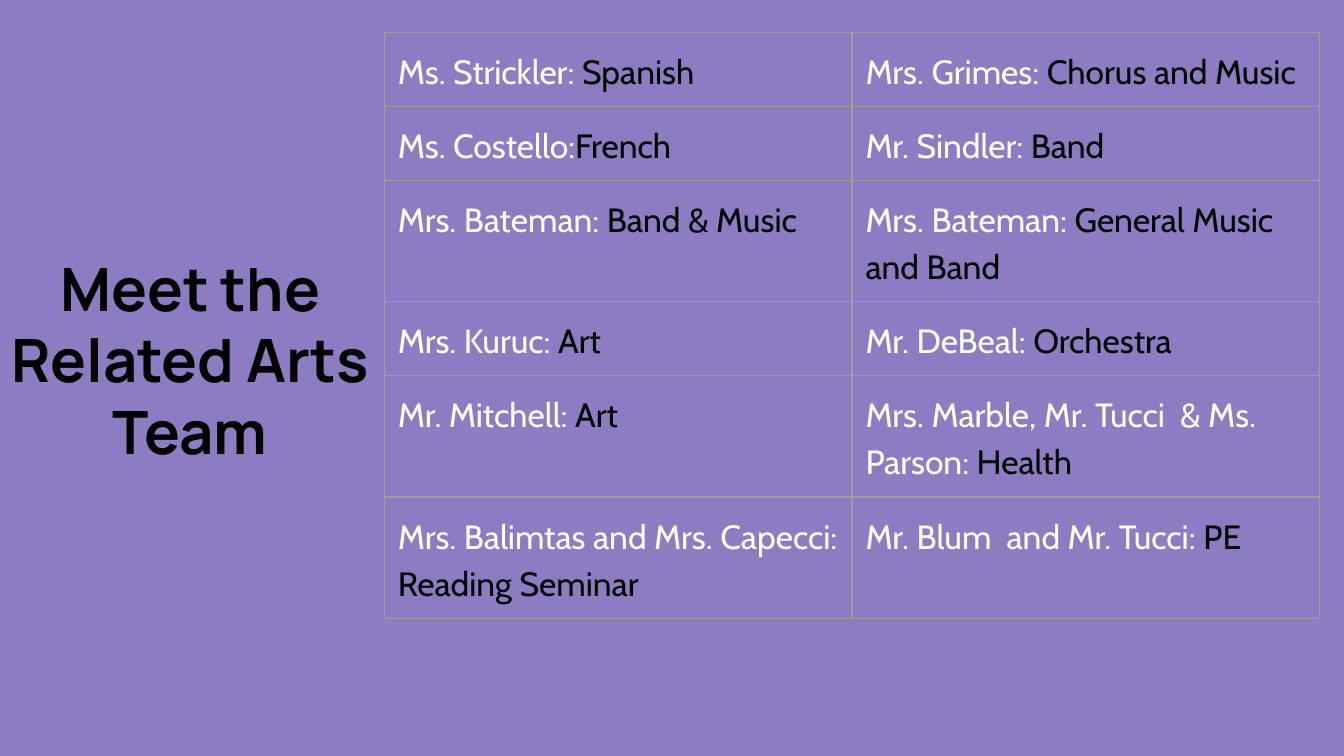
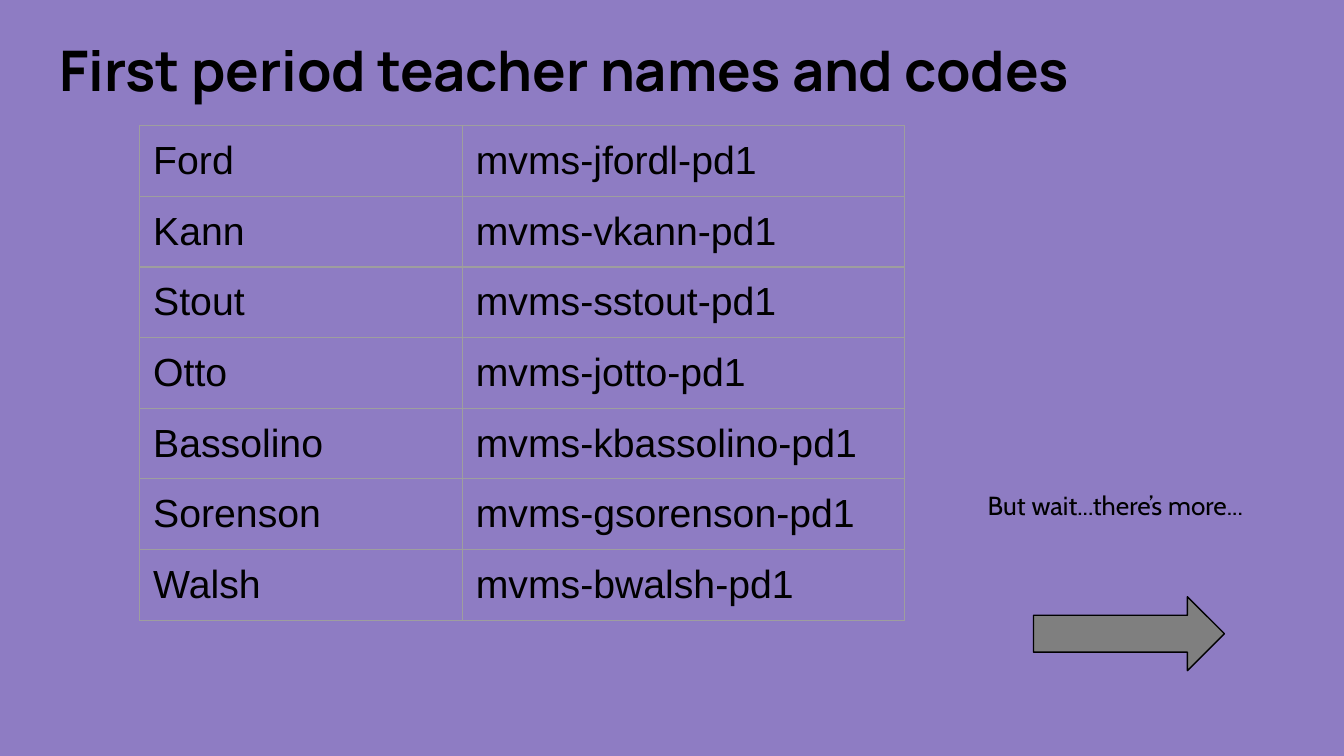
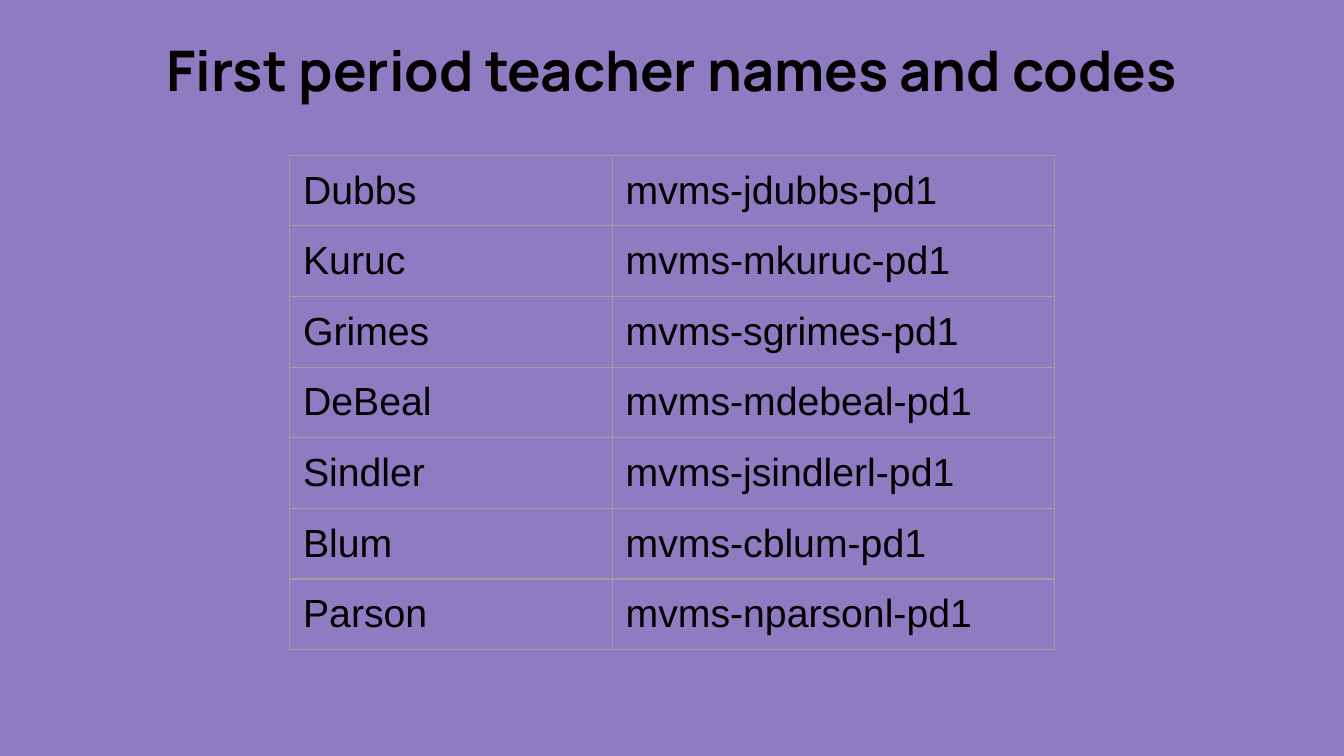
import dataclasses
import typing

import lxml.etree
import pptx
import pptx.dml.color
import pptx.enum.shapes
import pptx.enum.text
import pptx.oxml.ns
import pptx.presentation
import pptx.slide
import pptx.table
import pptx.text.text
import pptx.util

EMU_PER_PX = 4572
ALIGN = pptx.enum.text.PP_ALIGN


@dataclasses.dataclass(frozen=True)
class Theme:
    background: str = "8E7CC3"
    ink: str = "000000"
    teacher: str = "FFFFFF"
    border: str = "9E9E9E"
    arrow: str = "7F7F7F"
    title_font: str = "Manrope"
    body_font: str = "Cabin"
    code_font: str = "Arial"
    team_title_size: int = 32
    title_size: int = 30
    code_size: int = 21
    subject_size: int = 18
    note_size: int = 14
    line_width: float = 0.75
    inset: int = 20
    row_height: int = 84


THEME = Theme()


@dataclasses.dataclass(frozen=True)
class Box:
    left: int
    top: int
    width: int
    height: int

    def emu(self) -> tuple[pptx.util.Emu, ...]:
        return tuple(px(side) for side in dataclasses.astuple(self))


@dataclasses.dataclass(frozen=True)
class Title:
    text: str
    box: Box
    size: int
    align: ALIGN


class Assignment(typing.NamedTuple):
    teacher: str
    subject: str


class ClassCode(typing.NamedTuple):
    teacher: str
    code: str


@dataclasses.dataclass(frozen=True)
class CodeSlide:
    title_align: ALIGN
    table_left: int
    table_top: int
    codes: list[ClassCode]


CODE_COLUMNS = [480, 658]
TEAM_COLUMNS = [696, 696]
TEAM_ROWS = [84, 84, 180, 84, 84, 84]
TEAM_TITLE = Title(
    "Meet the Related Arts Team", Box(-72, 354, 710, 308), THEME.team_title_size, ALIGN.CENTER
)
TEAM = [
    (Assignment("Ms. Strickler:", " Spanish"), Assignment("Mrs. Grimes:", " Chorus and Music")),
    (Assignment("Ms. Costello:", "French"), Assignment("Mr. Sindler:", " Band")),
    (
        Assignment("Mrs. Bateman:", " Band & Music"),
        Assignment("Mrs. Bateman:", " General Music and Band"),
    ),
    (Assignment("Mrs. Kuruc:", " Art"), Assignment("Mr. DeBeal:", " Orchestra")),
    (
        Assignment("Mr. Mitchell:", " Art"),
        Assignment("Mrs. Marble, Mr. Tucci  & Ms. Parson:", " Health"),
    ),
    (
        Assignment("Mrs. Balimtas and Mrs. Capecci:", " Reading Seminar"),
        Assignment("Mr. Blum  and Mr. Tucci:", " PE"),
    ),
]
FIRST_CODES = CodeSlide(ALIGN.LEFT, 208, 187, [
    ClassCode("Ford", "mvms-jfordl-pd1"),
    ClassCode("Kann", "mvms-vkann-pd1"),
    ClassCode("Stout", "mvms-sstout-pd1"),
    ClassCode("Otto", "mvms-jotto-pd1"),
    ClassCode("Bassolino", "mvms-kbassolino-pd1"),
    ClassCode("Sorenson", "mvms-gsorenson-pd1"),
    ClassCode("Walsh", "mvms-bwalsh-pd1"),
])
MORE_CODES = CodeSlide(ALIGN.CENTER, 431, 231, [
    ClassCode("Dubbs", "mvms-jdubbs-pd1"),
    ClassCode("Kuruc", "mvms-mkuruc-pd1"),
    ClassCode("Grimes", "mvms-sgrimes-pd1"),
    ClassCode("DeBeal", "mvms-mdebeal-pd1"),
    ClassCode("Sindler", "mvms-jsindlerl-pd1"),
    ClassCode("Blum", "mvms-cblum-pd1"),
    ClassCode("Parson", "mvms-nparsonl-pd1"),
])


def px(length: int) -> pptx.util.Emu:
    return pptx.util.Emu(length * EMU_PER_PX)


def rgb(color: str) -> pptx.dml.color.RGBColor:
    return pptx.dml.color.RGBColor.from_string(color)


def format_run(
    run: pptx.text.text._Run, font: str, size: int, color: str = THEME.ink, bold: bool = False
) -> None:
    run.font.name = font
    run.font.size = pptx.util.Pt(size)
    run.font.bold = bold
    run.font.color.rgb = rgb(color)


def set_insets(holder: pptx.text.text.TextFrame | pptx.table._Cell) -> None:
    holder.margin_left = holder.margin_right = px(THEME.inset)
    holder.margin_top = holder.margin_bottom = px(THEME.inset)


def format_frame(frame: pptx.text.text.TextFrame) -> None:
    set_insets(frame)
    frame.word_wrap = True
    frame.auto_size = pptx.enum.text.MSO_AUTO_SIZE.NONE
    frame.vertical_anchor = pptx.enum.text.MSO_ANCHOR.TOP


def add_titled_slide(deck: pptx.presentation.Presentation, title: Title) -> pptx.slide.Slide:
    slide = deck.slides.add_slide(deck.slide_layouts.get_by_name("Title Only"))
    slide.background.fill.solid()
    slide.background.fill.fore_color.rgb = rgb(THEME.background)
    heading = slide.shapes.title
    heading.left, heading.top, heading.width, heading.height = title.box.emu()
    frame = heading.text_frame
    format_frame(frame)
    frame.text = title.text
    frame.paragraphs[0].alignment = title.align
    format_run(frame.paragraphs[0].runs[0], THEME.title_font, title.size, bold=True)
    return slide


def border_cell(cell: pptx.table._Cell) -> None:
    qn = pptx.oxml.ns.qn
    properties = cell._tc.get_or_add_tcPr()
    for side in ("a:lnL", "a:lnR", "a:lnT", "a:lnB"):
        edge = lxml.etree.SubElement(properties, qn(side))
        edge.set("w", str(pptx.util.Pt(THEME.line_width)))
        fill = lxml.etree.SubElement(edge, qn("a:solidFill"))
        lxml.etree.SubElement(fill, qn("a:srgbClr")).set("val", THEME.border)


def add_grid(
    slide: pptx.slide.Slide, left: int, top: int, columns: list[int], rows: list[int]
) -> pptx.table.Table:
    box = Box(left, top, sum(columns), sum(rows))
    table = slide.shapes.add_table(len(rows), len(columns), *box.emu()).table
    table.first_row = table.horz_banding = False
    for column, width in zip(table.columns, columns):
        column.width = px(width)
    for row, height in zip(table.rows, rows):
        row.height = px(height)
    for cell in table.iter_cells():
        set_insets(cell)
        border_cell(cell)
        cell.fill.background()
    return table


def write_assignment(cell: pptx.table._Cell, assignment: Assignment) -> None:
    paragraph = cell.text_frame.paragraphs[0]
    paragraph.text = assignment.teacher
    paragraph.line_spacing = 1.15
    paragraph.space_after = pptx.util.Pt(16)
    paragraph.add_run().text = assignment.subject
    for run, color in zip(paragraph.runs, (THEME.teacher, THEME.ink)):
        format_run(run, THEME.body_font, THEME.subject_size, color)


def add_team_slide(deck: pptx.presentation.Presentation) -> None:
    slide = add_titled_slide(deck, TEAM_TITLE)
    table = add_grid(slide, 572, 48, TEAM_COLUMNS, TEAM_ROWS)
    for row, assignments in zip(table.rows, TEAM):
        for cell, assignment in zip(row.cells, assignments):
            write_assignment(cell, assignment)


def add_code_slide(deck: pptx.presentation.Presentation, content: CodeSlide) -> pptx.slide.Slide:
    title = Title(
        "First period teacher names and codes",
        Box(68, 33, 1864, 136),
        THEME.title_size,
        content.title_align,
    )
    slide = add_titled_slide(deck, title)
    rows = [THEME.row_height] * len(content.codes)
    table = add_grid(slide, content.table_left, content.table_top, CODE_COLUMNS, rows)
    for row, entry in zip(table.rows, content.codes):
        for cell, text in zip(row.cells, entry):
            cell.text_frame.text = text
            format_run(cell.text_frame.paragraphs[0].runs[0], THEME.code_font, THEME.code_size)
    return slide


def add_more_hint(slide: pptx.slide.Slide) -> None:
    hint = slide.shapes.add_textbox(*Box(1450, 708, 482, 320).emu()).text_frame
    format_frame(hint)
    hint.text = "But wait...there’s more..."
    format_run(hint.paragraphs[0].runs[0], THEME.body_font, THEME.note_size)
    arrow = slide.shapes.add_shape(
        pptx.enum.shapes.MSO_SHAPE.RIGHT_ARROW, *Box(1538, 888, 284, 110).emu()
    )
    arrow.shadow.inherit = False
    arrow.fill.solid()
    arrow.fill.fore_color.rgb = rgb(THEME.arrow)
    arrow.line.color.rgb = rgb(THEME.ink)
    arrow.line.width = pptx.util.Pt(THEME.line_width)


def main() -> None:
    deck = pptx.Presentation()
    deck.slide_width, deck.slide_height = px(2000), px(1125)
    add_team_slide(deck)
    add_more_hint(add_code_slide(deck, FIRST_CODES))
    add_code_slide(deck, MORE_CODES)
    deck.save("out.pptx")


if __name__ == "__main__":
    main()
